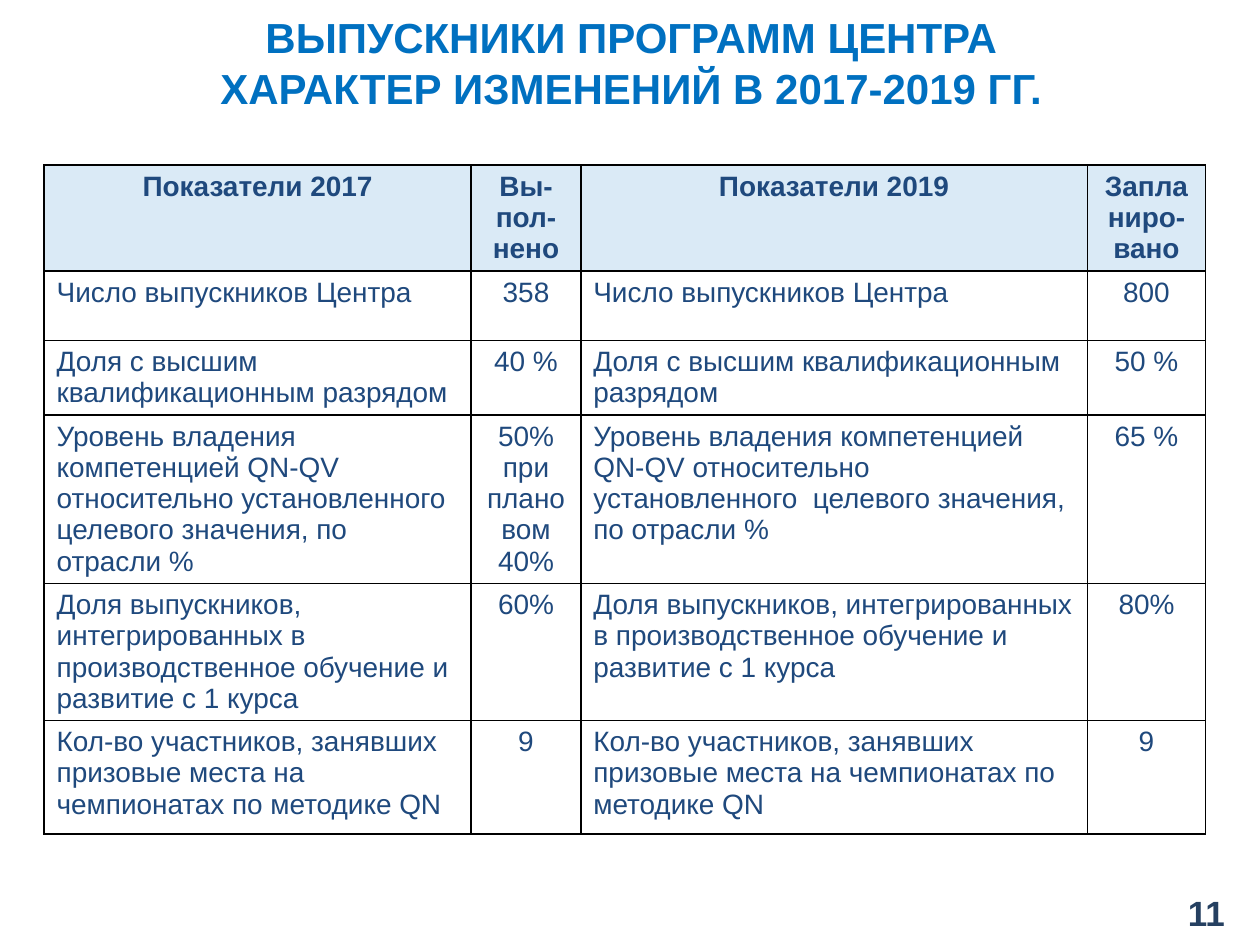
from dataclasses import dataclass

from lxml import etree
from pptx import Presentation
from pptx import util as u
from pptx.dml.color import RGBColor
from pptx.enum import text
from pptx.oxml import ns

FONT = "Arial"
TITLE_BLUE = "0070C0"
TABLE_BLUE = "1F497D"
NUMBER_BLUE = "254061"
HEADER_FILL = "DAEAF6"
BORDER = "000000"

COLUMN_WIDTHS = (3.39, 0.87, 4.02, 0.94)


@dataclass(frozen=True)
class Indicator:
    name: str
    achieved: str
    planned: str
    height: float


INDICATORS = (
    Indicator("Число выпускников Центра", "358", "800", 0.55),
    Indicator("Доля с высшим квалификационным разрядом", "40 %", "50 %", 0.57),
    Indicator(
        "Уровень владения компетенцией QN-QV относительно "
        "установленного  целевого значения, по отрасли %",
        "50% при плановом 40%", "65 %", 1.03,
    ),
    Indicator(
        "Доля выпускников, интегрированных в производственное "
        "обучение и развитие с 1 курса",
        "60%", "80%", 1.03,
    ),
    Indicator(
        "Кол-во участников, занявших призовые места "
        "на чемпионатах по методике QN",
        "9", "9", 0.9,
    ),
)
HEADER = ("Показатели 2017", "Вы-пол-нено", "Показатели 2019", "Запланиро-вано")
HEADER_HEIGHT = 0.55


def color(value: str) -> RGBColor:
    return RGBColor.from_string(value)


def add_span(para, words: str, size: float, shade: str, bold: bool) -> None:
    span = para.add_run()
    span.text = words
    span.font.name = FONT
    span.font.size = u.Pt(size)
    span.font.bold = bold
    span.font.color.rgb = color(shade)


def place(shape, left: float, top: float, width: float, height: float) -> None:
    shape.left, shape.top = u.Inches(left), u.Inches(top)
    shape.width, shape.height = u.Inches(width), u.Inches(height)


def add_borders(cell) -> None:
    properties = cell._tc.get_or_add_tcPr()
    for side in ("lnL", "lnR", "lnT", "lnB"):
        line = etree.SubElement(properties, ns.qn(f"a:{side}"), w=str(u.Pt(1)))
        fill = etree.SubElement(line, ns.qn("a:solidFill"))
        etree.SubElement(fill, ns.qn("a:srgbClr"), val=BORDER)


def fill_cell(cell, words: str, centred: bool, header: bool) -> None:
    add_borders(cell)
    if header:
        cell.fill.solid()
        cell.fill.fore_color.rgb = color(HEADER_FILL)
    else:
        cell.fill.background()
    para = cell.text_frame.paragraphs[0]
    para.alignment = text.PP_ALIGN.CENTER if centred else text.PP_ALIGN.LEFT
    add_span(para, words, 16, TABLE_BLUE, header)


def add_title(page) -> None:
    title = page.shapes.title
    place(title, 0.51, 0, 9, 0.99)
    frame = title.text_frame
    frame.word_wrap = True
    frame.vertical_anchor = text.MSO_ANCHOR.MIDDLE
    para = frame.paragraphs[0]
    para.alignment = text.PP_ALIGN.CENTER
    add_span(para, "ВЫПУСКНИКИ ПРОГРАММ ЦЕНТРА", 24, TITLE_BLUE, True)
    para.add_line_break()
    add_span(para, "ХАРАКТЕР ИЗМЕНЕНИЙ В 2017-2019 ГГ.", 24, TITLE_BLUE, True)


def add_indicator_table(page) -> None:
    heights = [HEADER_HEIGHT] + [item.height for item in INDICATORS]
    table = page.shapes.add_table(
        len(heights), len(COLUMN_WIDTHS), u.Inches(0.35), u.Inches(1.31),
        u.Inches(sum(COLUMN_WIDTHS)), u.Inches(sum(heights)),
    ).table
    table.first_row = table.horz_banding = False
    for column, width in zip(table.columns, COLUMN_WIDTHS):
        column.width = u.Inches(width)
    for row, height in zip(table.rows, heights):
        row.height = u.Inches(height)

    rows = [HEADER] + [
        (item.name, item.achieved, item.name, item.planned) for item in INDICATORS
    ]
    for r, row in enumerate(rows):
        for c, words in enumerate(row):
            header = r == 0
            fill_cell(table.cell(r, c), words, header or c % 2 == 1, header)


def add_page_number(page) -> None:
    box = page.shapes.add_textbox(
        u.Inches(9.33), u.Inches(7.02), u.Inches(0.54), u.Inches(0.44)
    )
    frame = box.text_frame
    frame.word_wrap = True
    frame.vertical_anchor = text.MSO_ANCHOR.MIDDLE
    add_span(frame.paragraphs[0], "11", 20, NUMBER_BLUE, True)


def main() -> None:
    deck = Presentation()
    deck.slide_width, deck.slide_height = u.Inches(10), u.Inches(7.5)
    page = deck.slides.add_slide(deck.slide_layouts.get_by_name("Title Only"))
    add_title(page)
    add_indicator_table(page)
    add_page_number(page)
    deck.save("out.pptx")


if __name__ == "__main__":
    main()
